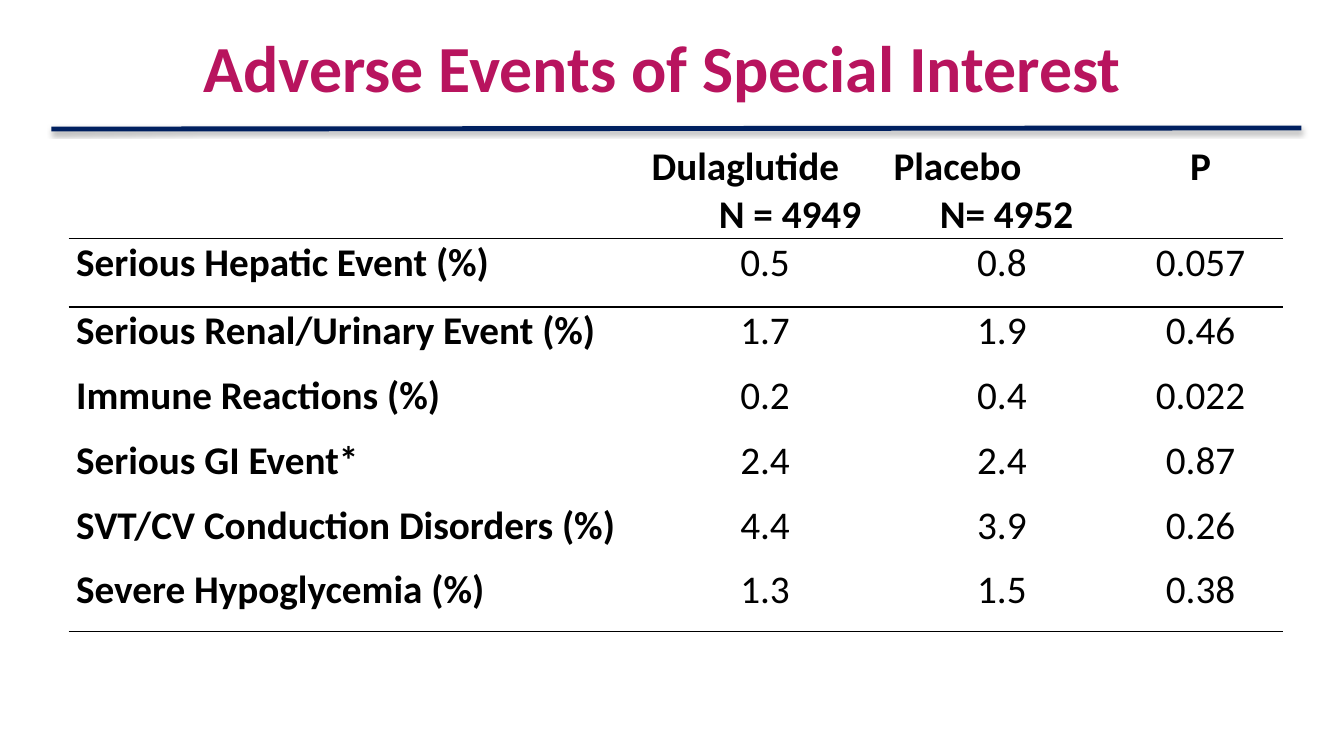
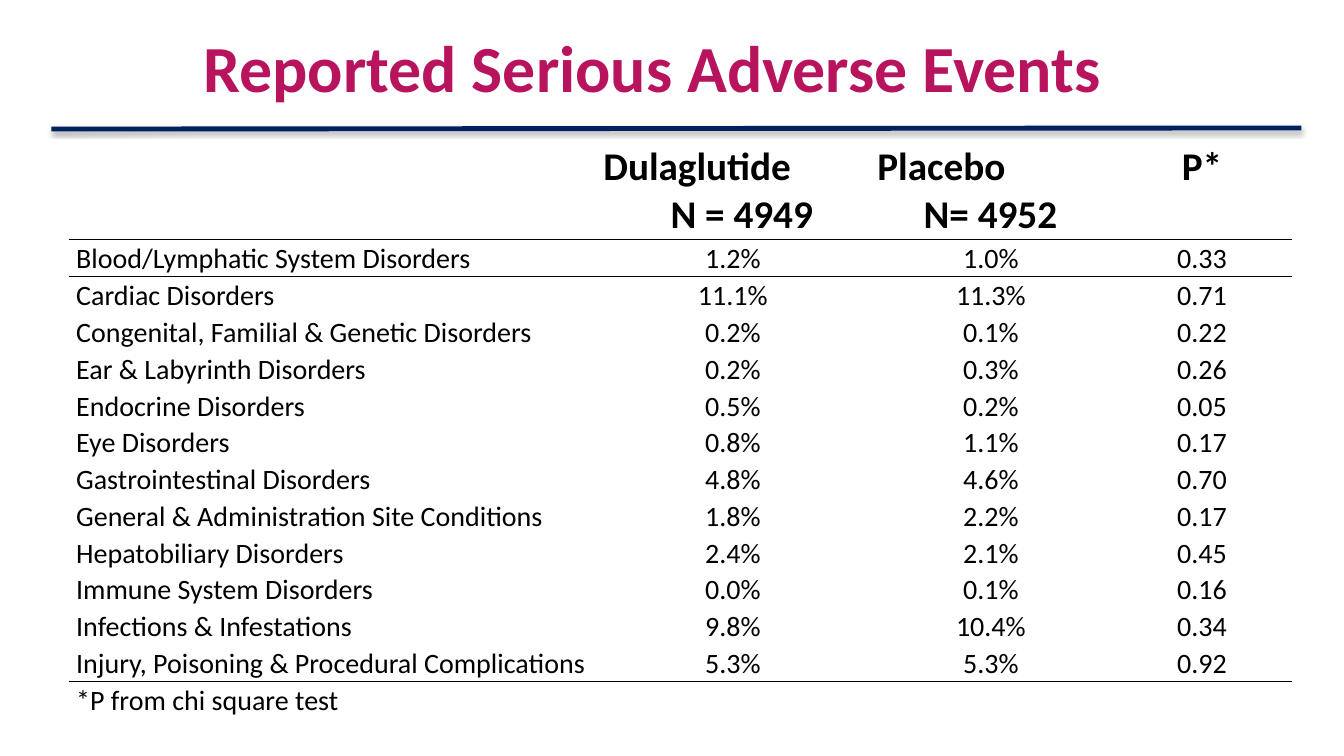
"""Build two slides with tables of adverse events under dulaglutide and placebo."""
import lxml.etree
import pptx
import pptx.dml.color
import pptx.enum.shapes
import pptx.enum.text
import pptx.oxml
import pptx.oxml.ns
import pptx.util

Pt = pptx.util.Pt
ALIGN = pptx.enum.text.PP_ALIGN
COLOURS = {"title": "B8145E", "rule": "002060", "text": "000000"}
FONT = "Calibri"
PLAIN_TABLE = "{2D5ABB26-0587-4C30-8999-92F81FD0307C}"
NAMESPACE = pptx.oxml.ns.nsdecls("a")

ARMS = [("Dulaglutide", "N = 4949", 48), ("Placebo", "N= 4952", 33)]

SPECIAL_EVENTS = [
    ("Serious Hepatic Event (%)", "0.5", "0.8", "0.057"),
    ("Serious Renal/Urinary Event (%)", "1.7", "1.9", "0.46"),
    ("Immune Reactions (%)", "0.2", "0.4", "0.022"),
    ("Serious GI Event*", "2.4", "2.4", "0.87"),
    ("SVT/CV Conduction Disorders (%)", "4.4", "3.9", "0.26"),
    ("Severe Hypoglycemia (%)", "1.3", "1.5", "0.38"),
]

SERIOUS_EVENTS = [
    ("Blood/Lymphatic System Disorders", "1.2%", "1.0%", "0.33"),
    ("Cardiac Disorders", "11.1%", "11.3%", "0.71"),
    ("Congenital, Familial & Genetic Disorders", "0.2%", "0.1%", "0.22"),
    ("Ear & Labyrinth Disorders", "0.2%", "0.3%", "0.26"),
    ("Endocrine Disorders", "0.5%", "0.2%", "0.05"),
    ("Eye Disorders", "0.8%", "1.1%", "0.17"),
    ("Gastrointestinal Disorders", "4.8%", "4.6%", "0.70"),
    ("General & Administration Site Conditions", "1.8%", "2.2%", "0.17"),
    ("Hepatobiliary Disorders", "2.4%", "2.1%", "0.45"),
    ("Immune System Disorders", "0.0%", "0.1%", "0.16"),
    ("Infections & Infestations", "9.8%", "10.4%", "0.34"),
    ("Injury, Poisoning & Procedural Complications", "5.3%", "5.3%", "0.92"),
    ("*P from chi square test",),
]


class Slides:
    """Hold the deck, its style and the current page."""

    def __init__(self):
        """Set the slide size and the shared layout."""
        self.deck = pptx.Presentation()
        self.deck.slide_width, self.deck.slide_height = Pt(960), Pt(540)
        self.layout = self.deck.slide_layouts[5]
        self.page = None

    def add_page(self, title):
        """Start a page with its title; the first one also supplies the layout rule."""
        is_first = self.page is None
        self.page = self.deck.slides.add_slide(self.layout)
        if is_first:
            self.layout.shapes.element.append(self.add_rule().element)
        box = self.page.shapes.title
        box.left, box.top, box.width, box.height = Pt(138.2), Pt(5.8), Pt(808.6), Pt(90)
        frame = box.text_frame
        frame.auto_size = pptx.enum.text.MSO_AUTO_SIZE.NONE
        frame.word_wrap = True
        frame.vertical_anchor = pptx.enum.text.MSO_ANCHOR.MIDDLE
        para = frame.paragraphs[0]
        para.alignment = ALIGN.LEFT
        para.line_spacing = 0.9
        self.add_span(para, title, 47, True, "title")

    def add_rule(self):
        """Draw the shadowed rule below the title."""
        rule = self.page.shapes.add_connector(
            pptx.enum.shapes.MSO_CONNECTOR.STRAIGHT, Pt(36.7), Pt(92.2), Pt(929.5), Pt(91.4))
        rule.line.width = Pt(3.5)
        rule.line.color.rgb = self.colour("rule")
        rule.element.spPr.append(pptx.oxml.parse_xml(
            f'<a:effectLst {NAMESPACE}><a:outerShdw blurRad="{Pt(3.1)}" dist="{Pt(1.8)}" '
            f'dir="5400000" rotWithShape="0"><a:srgbClr val="{COLOURS["text"]}">'
            '<a:alpha val="35000"/></a:srgbClr></a:outerShdw></a:effectLst>'))
        return rule

    def colour(self, name):
        """Return a named colour."""
        return pptx.dml.color.RGBColor.from_string(COLOURS[name])

    def add_span(self, para, text, size, bold, colour="text"):
        """Add one formatted run."""
        span = para.add_run()
        span.text = text
        span.font.name, span.font.size, span.font.bold = FONT, Pt(size), bold
        span.font.color.rgb = self.colour(colour)

    def add_border(self, cell):
        """Draw a thin line below a cell."""
        border = pptx.oxml.parse_xml(
            f'<a:lnB {NAMESPACE} w="{Pt(1)}"><a:solidFill>'
            f'<a:srgbClr val="{COLOURS["text"]}"/></a:solidFill></a:lnB>')
        cell._tc.get_or_add_tcPr().append(border)

    def add_arm(self, cell, name, count, indent):
        """Write a study arm with its indented patient count."""
        para = cell.text_frame.paragraphs[0]
        self.add_span(para, name, 28, True)
        para = cell.text_frame.add_paragraph()
        para._p.get_or_add_pPr().set("marL", str(Pt(indent)))
        self.add_span(para, count, 28, True)

    def add_value(self, cell, text, column, size, bold, spacing):
        """Write one value, centred except in the label column."""
        para = cell.text_frame.paragraphs[0]
        para.alignment = ALIGN.CENTER if column else ALIGN.LEFT
        para.line_spacing = spacing
        self.add_span(para, text, size, bold)

    def add_table(self, widths, heights, p_label, rows, ruled, size, bold_labels, spacing):
        """Add a table with study arms on top and lines below the ruled rows."""
        frame = self.page.shapes.add_table(
            len(heights), len(widths), Pt(49), Pt(102.2), Pt(sum(widths)), Pt(sum(heights)))
        table = frame.table
        table.first_row = table.horz_banding = False
        next(frame.element.iter(pptx.oxml.ns.qn("a:tableStyleId"))).text = PLAIN_TABLE
        for column, width in zip(table.columns, widths):
            column.width = Pt(width)
        for index, height in enumerate(heights):
            table.rows[index].height = Pt(height)
            for cell in table.rows[index].cells:
                cell.margin_left = cell.margin_right = Pt(5.4)
                cell.margin_top = cell.margin_bottom = Pt(0)
                if index in ruled:
                    self.add_border(cell)
                cell.fill.background()
        for column, arm in enumerate(ARMS, 1):
            self.add_arm(table.cell(0, column), *arm)
        self.add_value(table.cell(0, 3), p_label, 3, 28, True, 1.0)
        for index, row in enumerate(rows, 1):
            for column, text in enumerate(row):
                bold = bold_labels and column == 0
                self.add_value(table.cell(index, column), text, column, size, bold, spacing)


def main():
    """Build and save both slides."""
    slides = Slides()
    slides.add_page("Adverse Events of Special Interest")
    slides.add_table([411.1, 172.8, 165.6, 118.1], [68.4, 48.6] + [46.4] * 5, "P",
                     SPECIAL_EVENTS, (0, 1, 6), 28, True, 1.0)
    slides.add_page("Reported Serious Adverse Events")
    slides.add_table([376.6, 195.8, 172.8, 128.9], [69.1] + [26.3] * 13, "P*",
                     SERIOUS_EVENTS, (0, 1, 12), 20, False, 1.07)
    slides.deck.save("out.pptx")


if __name__ == "__main__":
    main()
